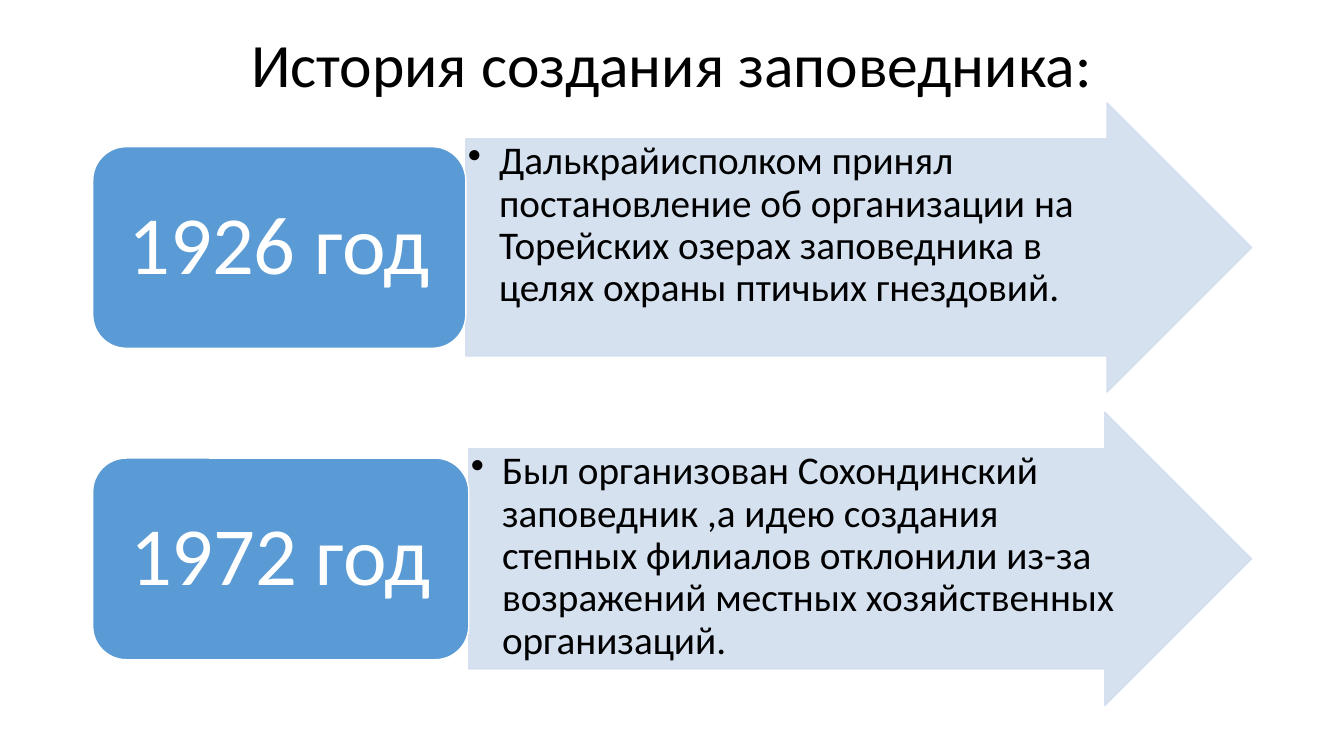
import pptx
import pptx.util
import pptx.dml.color
import pptx.enum.shapes
import pptx.enum.text
import pptx.oxml.ns
import lxml.etree
from dataclasses import dataclass

Pt = pptx.util.Pt
Inches = pptx.util.Inches
Kind = pptx.enum.shapes.MSO_SHAPE
Align = pptx.enum.text.PP_ALIGN
Anchor = pptx.enum.text.MSO_ANCHOR
qn = pptx.oxml.ns.qn


@dataclass
class Theme:
    font: str = "Calibri"
    ink: str = "000000"
    paper: str = "FFFFFF"
    blue: str = "5B9BD5"
    pale: str = "D2DEEF"
    head: int = 44
    year: int = 59
    body: int = 28


class Page:
    """One slide on a grid of 100 columns by 100 rows."""

    def __init__(self, deck, theme):
        self.theme = theme
        self.col = deck.slide_width / 100
        self.row = deck.slide_height / 100
        self.slide = deck.slides.add_slide(deck.slide_layouts[5])

    def place(self, x, y, w, h):
        return (round(x * self.col), round(y * self.row),
                round(w * self.col), round(h * self.row))

    def color(self, name):
        return pptx.dml.color.RGBColor.from_string(name)

    def label(self, frame, text, size, color, align, anchor):
        frame.word_wrap = True
        frame.vertical_anchor = anchor
        para = frame.paragraphs[0]
        para.alignment = align
        para.line_spacing = 0.9
        run = para.add_run()
        run.text = text
        run.font.name = self.theme.font
        run.font.size = Pt(size)
        run.font.color.rgb = self.color(color)
        return para

    def pad(self, frame, size):
        frame.margin_left = frame.margin_right = Inches(size)
        frame.margin_top = frame.margin_bottom = Inches(size)

    def shape(self, kind, spot, fill, line, alpha=100):
        item = self.slide.shapes.add_shape(kind, *self.place(*spot))
        item.shadow.inherit = False
        item.fill.solid()
        item.fill.fore_color.rgb = self.color(fill)
        item.line.color.rgb = self.color(line)
        item.line.width = Pt(1)
        if alpha < 100:
            for tint in item._element.spPr.iter(qn("a:srgbClr")):
                lxml.etree.SubElement(tint, qn("a:alpha"), val=str(alpha * 1000))
        return item

    def title(self, text, spot):
        item = self.slide.shapes.title
        item.left, item.top, item.width, item.height = self.place(*spot)
        item.text_frame.auto_size = pptx.enum.text.MSO_AUTO_SIZE.NONE
        self.label(item.text_frame, text, self.theme.head, self.theme.ink,
                   Align.CENTER, Anchor.MIDDLE)

    def arrow(self, text, spot):
        item = self.shape(Kind.RIGHT_ARROW, spot, self.theme.pale,
                          self.theme.pale, 90)
        item.adjustments[0], item.adjustments[1] = 0.75, 0.5
        self.pad(item.text_frame, 0.02)
        para = self.label(item.text_frame, text, self.theme.body,
                          self.theme.ink, Align.LEFT, Anchor.TOP)
        props = para._p.get_or_add_pPr()
        props.set("marL", str(Inches(0.31)))
        props.set("indent", str(-Inches(0.31)))
        lxml.etree.SubElement(props, qn("a:buChar"), char="•")

    def badge(self, text, spot):
        item = self.shape(Kind.ROUNDED_RECTANGLE, spot, self.theme.blue,
                          self.theme.paper)
        self.pad(item.text_frame, 0.12)
        self.label(item.text_frame, text, self.theme.year, self.theme.paper,
                   Align.CENTER, Anchor.MIDDLE)


LEFT, RIGHT, TALL = 6.9, 93.13, 26.67

# Year, text, column where badge meets arrow, arrow top, arrow height
STEPS = [
    ("1926 год",
     "Далькрайисполком принял постановление об организации на Торейских "
     "озерах заповедника в целях охраны птичьих гнездовий.",
     34.66, 13.6, 38.27),
    ("1972 год",
     "Был организован Сохондинский заповедник ,а идею создания степных "
     "филиалов отклонили из-за возражений местных хозяйственных организаций.",
     34.88, 54.53, 38.8),
]


def main():
    deck = pptx.Presentation()
    deck.slide_width, deck.slide_height = Inches(13.33), Inches(7.5)
    page = Page(deck, Theme())

    # Heading
    page.title("История создания заповедника:",
               (LEFT, -0.67, RIGHT - LEFT, 19.33))

    # Steps: each badge is centred on the height of its arrow
    for year, text, split, top, high in STEPS:
        page.arrow(text, (split, top, RIGHT - split, high))
        page.badge(year, (LEFT, top + (high - TALL) / 2, split - LEFT, TALL))

    deck.save("out.pptx")


if __name__ == "__main__":
    main()
